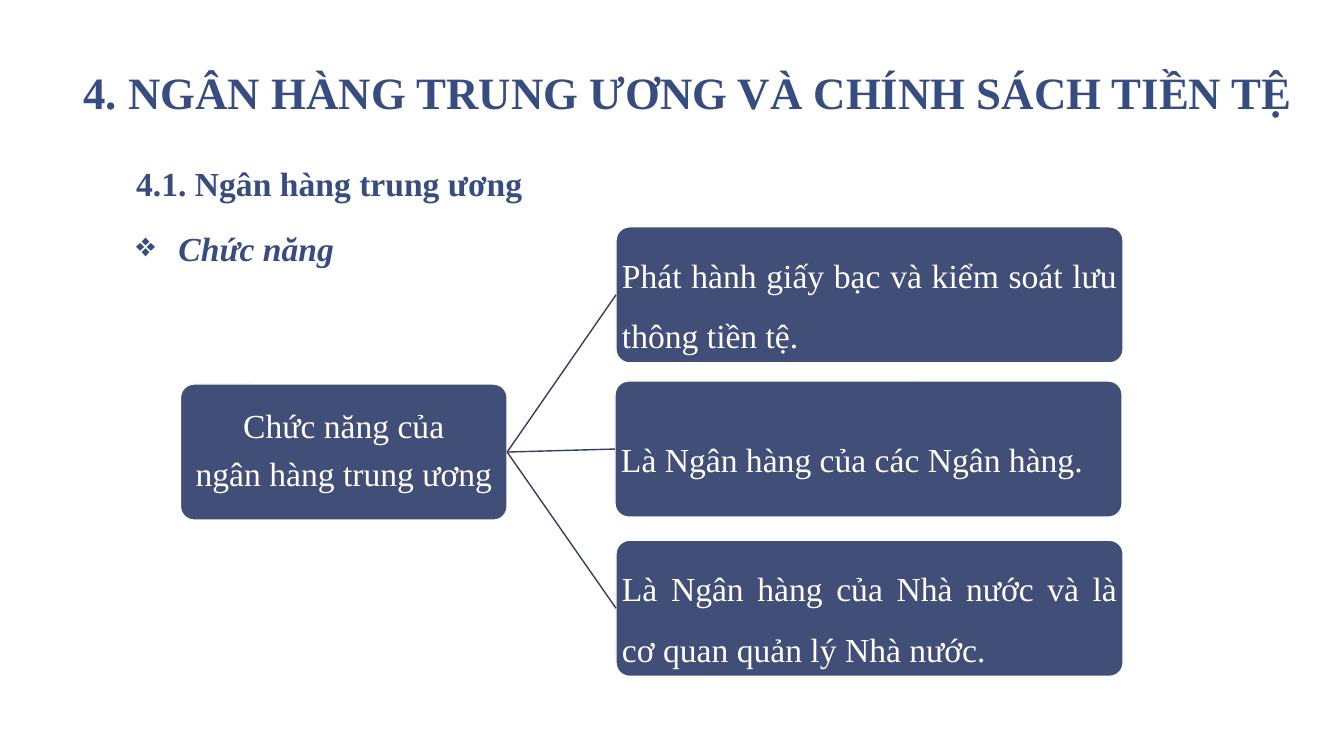
from lxml import etree
from pptx import Presentation
from pptx.dml.color import RGBColor
from pptx.enum.shapes import MSO_CONNECTOR, MSO_SHAPE
from pptx.enum.text import MSO_ANCHOR, PP_ALIGN
from pptx.oxml.ns import qn
from pptx.util import Inches, Pt

ROUNDED = MSO_SHAPE.ROUNDED_RECTANGLE
STRAIGHT = MSO_CONNECTOR.STRAIGHT
TOP, MIDDLE, BOTTOM = MSO_ANCHOR.TOP, MSO_ANCHOR.MIDDLE, MSO_ANCHOR.BOTTOM
LEFT, CENTER, JUSTIFY = PP_ALIGN.LEFT, PP_ALIGN.CENTER, PP_ALIGN.JUSTIFY

COLORS = {"heading": "374C81", "box": "414E77", "link": "343E5F", "white": "FFFFFF"}
FONT = "Times New Roman"
LEFT_SIDE, RIGHT_SIDE = 1, 3
BOX_HEIGHT = 1.35
FUNCTION_WIDTH = 5.03
FUNCTIONS = [
    (6.11, 2.25, "Phát hành giấy bạc và kiểm soát lưu thông tiền tệ.", JUSTIFY),
    (6.10, 3.78, "Là Ngân hàng của các Ngân hàng.", LEFT),
    (6.11, 5.36, "Là Ngân hàng của Nhà nước và là cơ quan quản lý Nhà nước.", JUSTIFY),
]


def color(name):
    return RGBColor.from_string(COLORS[name])


def apply(target, values):
    for name, value in values.items():
        setattr(target, name, value)


class SlideBuilder:
    def __init__(self, slide):
        self.slide = slide

    def fill_text(self, frame, lines, ink, anchor, insets, layout, **font):
        """Write lines as paragraphs sharing one layout and font."""
        across, down = (Inches(inset) for inset in insets)
        apply(frame, {"word_wrap": True, "vertical_anchor": anchor,
                      "margin_left": across, "margin_right": across,
                      "margin_top": down, "margin_bottom": down})
        for index, line in enumerate(lines):
            paragraph = frame.paragraphs[0] if index == 0 else frame.add_paragraph()
            paragraph.text = line
            apply(paragraph, layout)
            if index == 0:
                paragraph.space_before = Pt(0)
            run_font = paragraph.runs[0].font
            apply(run_font, {"name": FONT, "size": Pt(24), **font})
            run_font.color.rgb = color(ink)
        return frame.paragraphs

    def heading(self, place, lines, anchor, layout, **font):
        frame = self.slide.shapes.add_textbox(*map(Inches, place)).text_frame
        return self.fill_text(frame, lines, "heading", anchor, (0.13, 0.07),
                              layout, bold=True, **font)

    def bullet(self, paragraph, symbol, indent):
        properties = paragraph._p.get_or_add_pPr()
        properties.set("marL", str(Inches(indent)))
        properties.set("indent", str(-Inches(indent)))
        etree.SubElement(properties, qn("a:buChar")).set("char", symbol)
        paragraph.runs[0].font.italic = True

    def box(self, left, top, width, lines, align, spacing):
        place = map(Inches, (left, top, width, BOX_HEIGHT))
        box = self.slide.shapes.add_shape(ROUNDED, *place)
        box.adjustments[0] = 0.1
        box.shadow.inherit = False
        box.fill.solid()
        box.fill.fore_color.rgb = color("box")
        box.line.color.rgb = color("white")
        box.line.width = Pt(1)
        layout = {"alignment": align, "line_spacing": spacing, "space_after": Pt(8.4)}
        self.fill_text(box.text_frame, lines, "white", MIDDLE, (0.02, 0.02), layout)
        return box

    def link(self, source, target):
        link = self.slide.shapes.add_connector(STRAIGHT, 0, 0, 0, 0)
        link.begin_connect(source, RIGHT_SIDE)
        link.end_connect(target, LEFT_SIDE)
        link.line.color.rgb = color("link")
        link.line.width = Pt(1)
        etree.SubElement(link._element.spPr, qn("a:effectLst"))


def main():
    deck = Presentation()
    deck.slide_width, deck.slide_height = Inches(13.33), Inches(7.5)
    builder = SlideBuilder(deck.slides.add_slide(deck.slide_layouts[6]))

    builder.heading((0.66, 0.08, 12.33, 1.17),
                    ["4. NGÂN HÀNG TRUNG ƯƠNG VÀ CHÍNH SÁCH TIỀN TỆ"], BOTTOM,
                    {"alignment": CENTER, "line_spacing": 0.85}, size=Pt(32))
    section = builder.heading((1.22, 1.58, 11.1, 5.55),
                              ["4.1. Ngân hàng trung ương", "Chức năng"], TOP,
                              {"line_spacing": 0.95, "space_before": Pt(18.7)})
    builder.bullet(section[1], "❖", 0.42)

    central_bank = builder.box(1.79, 3.81, 3.24,
                               ["Chức năng của", "ngân hàng trung ương"], CENTER, 0.9)
    for left, top, wording, align in FUNCTIONS:
        function = builder.box(left, top, FUNCTION_WIDTH, [wording], align, 1.5)
        builder.link(central_bank, function)

    deck.save("out.pptx")


if __name__ == "__main__":
    main()
